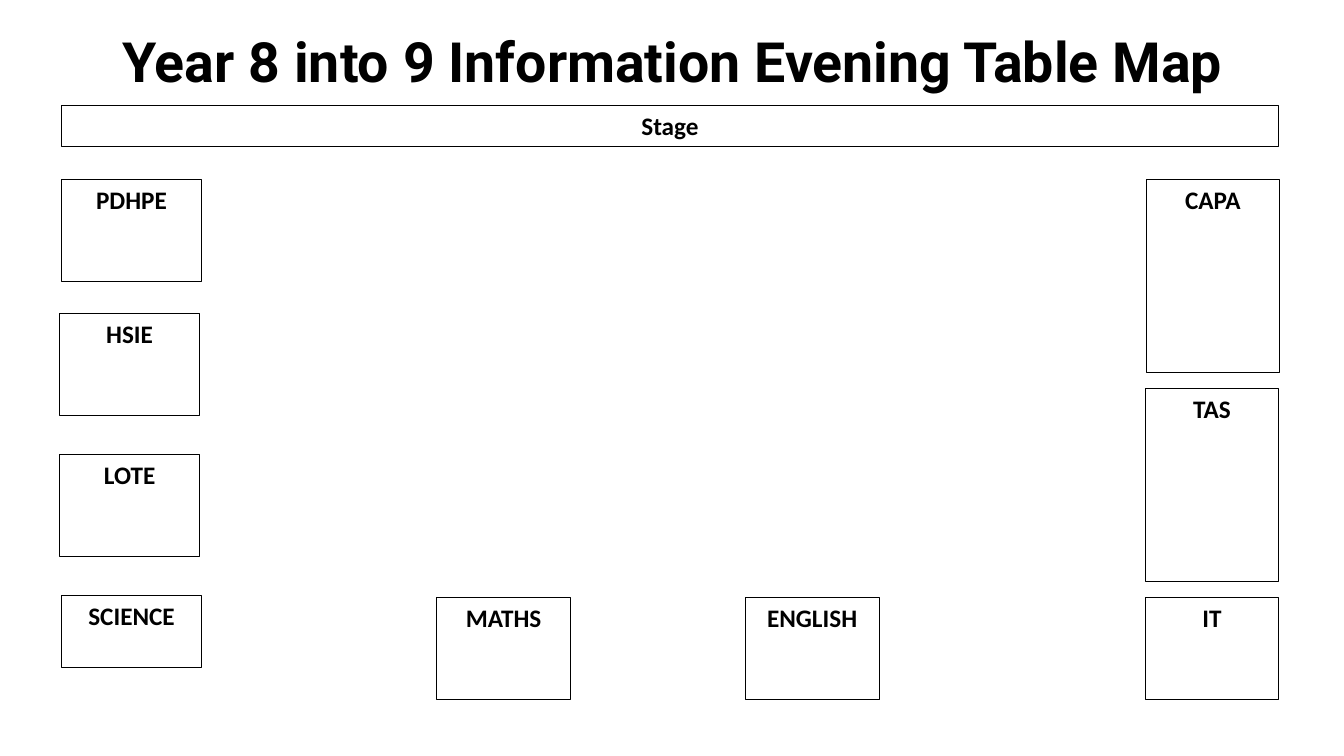
from pptx import Presentation
from pptx.dml.color import RGBColor
from pptx.enum.text import MSO_ANCHOR, MSO_AUTO_SIZE, PP_ALIGN
from pptx.util import Inches, Pt

TITLE = "Year 8 into 9 Information Evening Table Map"
BLACK = "000000"

# Room plan: label, left, top, width, height in inches
STAGE = ("Stage", 0.61, 1.05, 12.07, 0.4)
LEFT_TABLES = [
    ("PDHPE", 0.61, 1.78, 1.39, 1.01),
    ("HSIE", 0.59, 3.11, 1.39, 1.01),
    ("LOTE", 0.59, 4.51, 1.39, 1.01),
    ("SCIENCE", 0.61, 5.91, 1.39, 0.71),
]
BACK_TABLES = [
    ("MATHS", 4.33, 5.93, 1.33, 1.01),
    ("ENGLISH", 7.39, 5.93, 1.33, 1.01),
]
RIGHT_TABLES = [
    ("CAPA", 11.37, 1.78, 1.32, 1.92),
    ("TAS", 11.36, 3.85, 1.32, 1.92),
    ("IT", 11.36, 5.93, 1.32, 1.01),
]


def color(value):
    return RGBColor.from_string(value)


def write(shape, text, font, size, anchor):
    frame = shape.text_frame
    frame.text = text
    frame.word_wrap = True
    frame.auto_size = MSO_AUTO_SIZE.NONE
    frame.vertical_anchor = anchor
    para = frame.paragraphs[0]
    para.alignment = PP_ALIGN.CENTER
    span = para.runs[0]
    span.font.name = font
    span.font.size = Pt(size)
    span.font.bold = True
    span.font.color.rgb = color(BLACK)
    return para


def add_table_box(page, label, *place):
    box = page.shapes.add_textbox(*(Inches(length) for length in place))
    box.line.color.rgb = color(BLACK)
    box.line.width = Pt(0.75)
    write(box, label, "Calibri", 18, MSO_ANCHOR.TOP)


def main():
    deck = Presentation()
    deck.slide_width = Inches(13.33)
    deck.slide_height = Inches(7.5)
    page = deck.slides.add_slide(deck.slide_layouts[5])

    # Title
    title = page.shapes.title
    title.left, title.top = Inches(0.92), Inches(0.4)
    title.width, title.height = Inches(11.5), Inches(0.49)
    heading = write(title, TITLE, "Roboto", 39.6, MSO_ANCHOR.MIDDLE)
    heading.line_spacing = 0.9

    # Stage and faculty tables
    for table in [STAGE, *LEFT_TABLES, *BACK_TABLES, *RIGHT_TABLES]:
        add_table_box(page, *table)

    deck.save("out.pptx")


if __name__ == "__main__":
    main()
